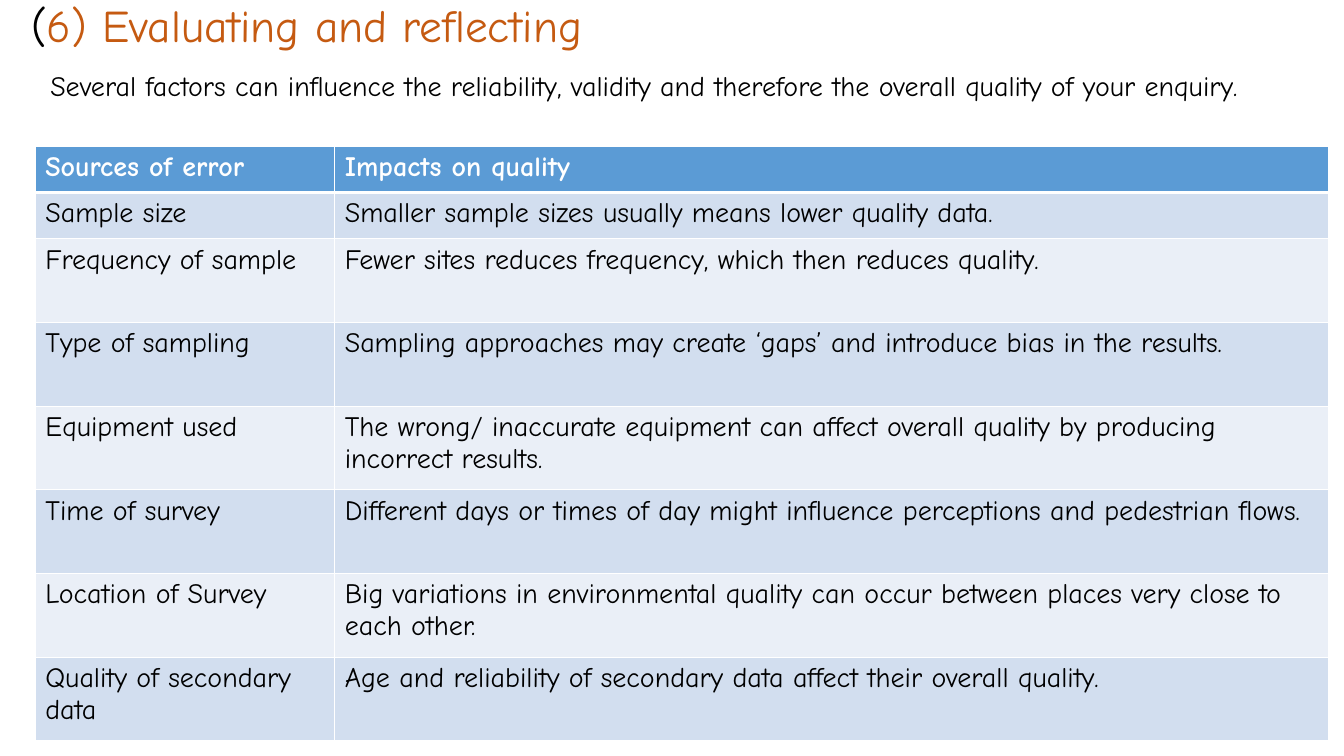
from dataclasses import dataclass

from lxml.etree import SubElement
from pptx import Presentation
from pptx.dml.color import RGBColor
from pptx.enum.text import MSO_ANCHOR as Anchor
from pptx.oxml.ns import qn
from pptx.util import Inches, Pt

FONT = "Comic Neue"
BLACK = RGBColor(0x00, 0x00, 0x00)
WHITE = RGBColor(0xFF, 0xFF, 0xFF)
ORANGE = RGBColor(0xC5, 0x5A, 0x11)
BLUE = RGBColor(0x5B, 0x9B, 0xD5)
BAND_DARK = RGBColor(0xD2, 0xDE, 0xEF)
BAND_LIGHT = RGBColor(0xEA, 0xEF, 0xF7)

COLUMN_WIDTHS = (2.97, 9.86)
SHORT_ROW, TALL_ROW = 0.46, 0.83


@dataclass
class ErrorSource:
    name: str
    impact: str
    height: float = TALL_ROW


HEADER = ErrorSource("Sources of error", "Impacts on quality", SHORT_ROW)
SOURCES = [
    ErrorSource("Sample size", "Smaller sample sizes usually means lower quality data.", SHORT_ROW),
    ErrorSource("Frequency of sample", "Fewer sites reduces frequency, which then reduces quality."),
    ErrorSource("Type of sampling",
                "Sampling approaches may create ‘gaps’ and introduce bias in the results."),
    ErrorSource("Equipment used",
                "The wrong/ inaccurate equipment can affect overall quality by producing incorrect results."),
    ErrorSource("Time of survey",
                "Different days or times of day might influence perceptions and pedestrian flows."),
    ErrorSource("Location of Survey",
                "Big variations in environmental quality can occur between places very close to each other."),
    ErrorSource("Quality of secondary data",
                "Age and reliability of secondary data affect their overall quality."),
]


def add_span(para, text: str, *, size: float = 20, color: RGBColor = BLACK, bold: bool = False) -> None:
    span = para.add_run()
    span.text = text
    span.font.name = FONT
    span.font.size = Pt(size)
    span.font.bold = bold
    span.font.color.rgb = color


def add_box(page, left: float, top: float, width: float, height: float, anchor=Anchor.TOP):
    box = page.shapes.add_textbox(Inches(left), Inches(top), Inches(width), Inches(height))
    box.text_frame.word_wrap = True
    box.text_frame.vertical_anchor = anchor
    return box.text_frame.paragraphs[0]


def set_borders(cell, bottom_width: float) -> None:
    properties = cell._tc.get_or_add_tcPr()
    for side in "LRTB":
        width = bottom_width if side == "B" else 1
        line = SubElement(properties, qn(f"a:ln{side}"), w=str(Pt(width)))
        SubElement(SubElement(line, qn("a:solidFill")), qn("a:srgbClr"), val=str(WHITE))


def add_error_table(page, left: float, top: float) -> None:
    rows = [HEADER, *SOURCES]
    frame = page.shapes.add_table(
        len(rows), len(COLUMN_WIDTHS), Inches(left), Inches(top),
        Inches(sum(COLUMN_WIDTHS)), Inches(sum(row.height for row in rows)))
    table = frame.table
    for column, width in zip(table.columns, COLUMN_WIDTHS):
        column.width = Inches(width)
    for index, row in enumerate(rows):
        is_header = index == 0
        fill = BLUE if is_header else (BAND_LIGHT, BAND_DARK)[index % 2]
        table.rows[index].height = Inches(row.height)
        for cell, text in zip(table.rows[index].cells, (row.name, row.impact)):
            set_borders(cell, 3 if is_header else 1)
            cell.fill.solid()
            cell.fill.fore_color.rgb = fill
            add_span(cell.text_frame.paragraphs[0], text,
                     color=WHITE if is_header else BLACK, bold=is_header)


def main() -> None:
    deck = Presentation()
    deck.slide_width, deck.slide_height = Inches(13.33), Inches(7.5)
    page = deck.slides.add_slide(deck.slide_layouts[6])

    # Title
    title = add_box(page, 0.21, 0, 13.12, 0.55, Anchor.MIDDLE)
    title.line_spacing = 0.9
    add_span(title, "(", size=32.4)
    add_span(title, "6) Evaluating and reflecting", size=32.4, color=ORANGE)

    # Sources of error and their impacts
    add_error_table(page, 0.35, 1.45)

    # Introduction
    intro = add_box(page, 0.4, 0.63, 12.75, 0.77)
    add_span(intro, "Several factors can influence the reliability, validity and "
                    "therefore the overall quality of your enquiry.")

    deck.save("out.pptx")


if __name__ == "__main__":
    main()
